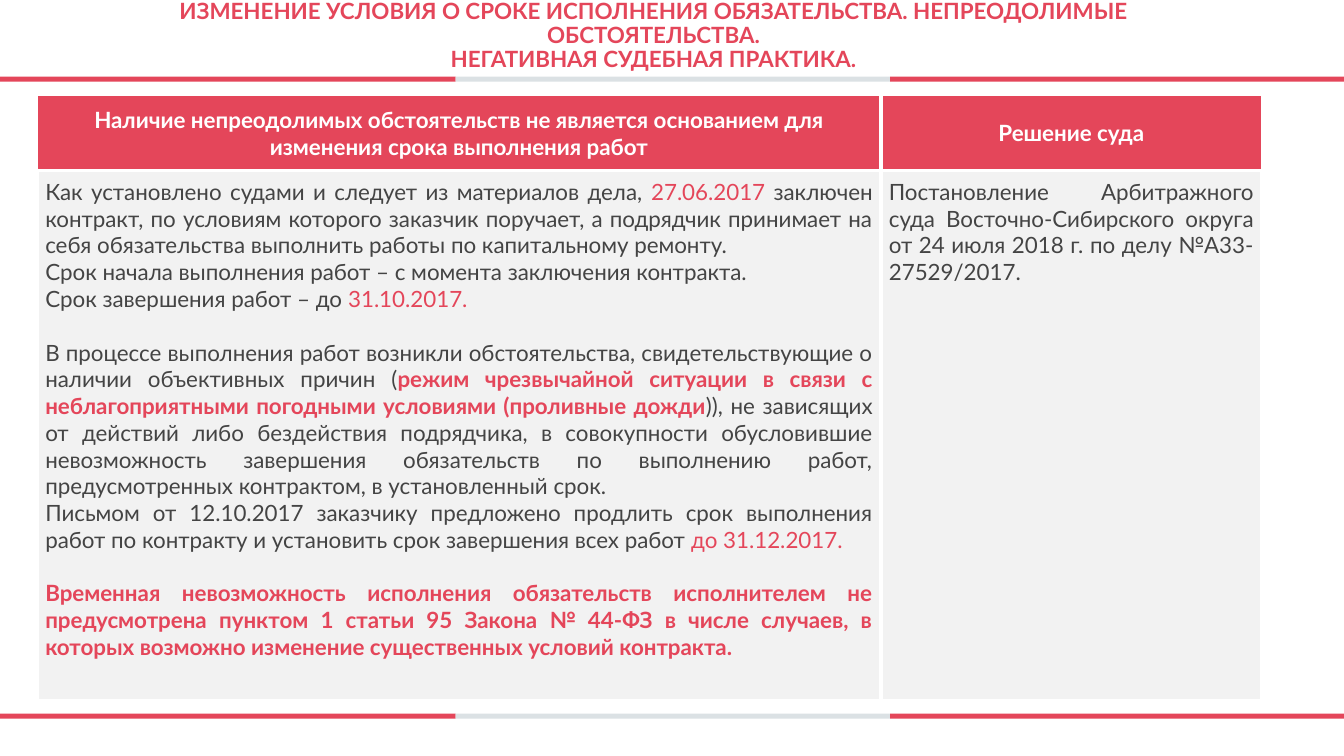
"""Builds a slide on negative court practice about contract deadlines."""
from lxml import etree
from pptx import Presentation
from pptx.dml.color import RGBColor
from pptx.enum.shapes import MSO_SHAPE
from pptx.enum.text import MSO_ANCHOR, PP_ALIGN
from pptx.oxml.ns import qn
from pptx.util import Pt

RECT = MSO_SHAPE.RECTANGLE
TOP, MIDDLE = MSO_ANCHOR.TOP, MSO_ANCHOR.MIDDLE
CENTER, JUSTIFY = PP_ALIGN.CENTER, PP_ALIGN.JUSTIFY

THEME = {
    "red": "E4465A", "grey": "DBE1E4", "panel": "F2F2F2",
    "text": "444444", "white": "FFFFFF",
    "font": "Lato", "size": 16, "line": 19.2,
}

TITLE = [
    "ИЗМЕНЕНИЕ УСЛОВИЯ О СРОКЕ ИСПОЛНЕНИЯ ОБЯЗАТЕЛЬСТВА. НЕПРЕОДОЛИМЫЕ ОБСТОЯТЕЛЬСТВА.",
    "НЕГАТИВНАЯ СУДЕБНАЯ ПРАКТИКА.",
]
HEADERS = [
    "Наличие непреодолимых обстоятельств не является основанием для изменения срока выполнения работ",
    "Решение суда",
]
PLAIN, RED, BOLD = ("text", False), ("red", False), ("red", True)
CASE = [
    (False, [
        ("Как установлено судами и следует из материалов дела, ", PLAIN),
        ("27.06.2017", RED),
        (" заключен контракт, по условиям которого заказчик поручает, а подрядчик принимает на себя "
         "обязательства выполнить работы по капитальному ремонту.", PLAIN),
    ]),
    (False, [("Срок начала выполнения работ – с момента заключения контракта.", PLAIN)]),
    (False, [("Срок завершения работ – до ", PLAIN), ("31.10.2017.", RED)]),
    (True, [
        ("В процессе выполнения работ возникли обстоятельства, свидетельствующие о наличии "
         "объективных причин (", PLAIN),
        ("режим чрезвычайной ситуации в связи с неблагоприятными погодными условиями "
         "(проливные дожди", BOLD),
        (")), не зависящих от действий либо бездействия подрядчика, в совокупности обусловившие "
         "невозможность завершения обязательств по выполнению работ, предусмотренных контрактом, "
         "в установленный срок.", PLAIN),
    ]),
    (False, [
        ("Письмом от 12.10.2017 заказчику предложено продлить срок выполнения работ по контракту "
         "и установить срок завершения всех работ ", PLAIN),
        ("до 31.12.2017.", RED),
    ]),
    (True, [
        ("Временная невозможность исполнения обязательств исполнителем не предусмотрена пунктом 1 "
         "статьи 95 Закона № 44-ФЗ в числе случаев, в которых возможно изменение существенных "
         "условий контракта.", BOLD),
    ]),
]
RULING = [(False, [
    ("Постановление Арбитражного суда Восточно-Сибирского округа от 24 июля 2018 г. "
     "по делу №А33-27529/2017.", PLAIN),
])]

SLIDE_W, SLIDE_H = 960, 540
BAND_EDGES = [0, 325.4, 635.8, SLIDE_W]
BAND_COLORS = ["red", "grey", "red"]
BAND_TOPS, BAND_H = [54.7, 509.8], 3.6
TITLE_BOX = (109.4, -1.4, 715, 54.7)
TABLE_LEFT, TABLE_TOP = 26.6, 68.4
COLS, ROWS = [602.6, 272.2], [53.3, 378.7]
INSET = 5.76


def rgb(name):
    return RGBColor.from_string(THEME[name])


def add_text(p, text, color="text", bold=False):
    r = p.add_run()
    r.text = text
    r.font.name, r.font.size = THEME["font"], Pt(THEME["size"])
    r.font.bold, r.font.color.rgb = bold, rgb(color)


def add_band(s, left, top, width, color):
    sp = s.shapes.add_shape(RECT, Pt(left), Pt(top), Pt(width), Pt(BAND_H))
    sp.shadow.inherit = False
    sp.fill.solid()
    sp.fill.fore_color.rgb = rgb(color)
    sp.line.fill.background()


def add_title(s):
    tf = s.shapes.add_textbox(*map(Pt, TITLE_BOX)).text_frame
    tf.word_wrap = True
    tf.vertical_anchor = MIDDLE
    p = tf.paragraphs[0]
    p.alignment, p.line_spacing = CENTER, 0.9
    for i, line in enumerate(TITLE):
        if i:
            p.add_line_break()
        add_text(p, line, color="red", bold=True)


def style_cell(cell, fill, anchor, inset_y, borders):
    cell.fill.solid()
    cell.fill.fore_color.rgb = rgb(fill)
    cell.vertical_anchor = anchor
    cell.margin_left = cell.margin_right = Pt(INSET)
    cell.margin_top = cell.margin_bottom = Pt(inset_y)
    tcPr = cell._tc.get_or_add_tcPr()
    for i, (side, width) in enumerate(zip("LRTB", borders)):
        ln = etree.Element(qn(f"a:ln{side}"), w=str(Pt(width)))
        solid = etree.SubElement(ln, qn("a:solidFill"))
        etree.SubElement(solid, qn("a:srgbClr"), val=THEME["white"])
        tcPr.insert(i, ln)


def fill_cell(cell, paragraphs, align):
    tf = cell.text_frame
    for i, (gap, runs) in enumerate(paragraphs):
        p = tf.add_paragraph() if i else tf.paragraphs[0]
        p.alignment = align
        if gap:
            p.space_before = Pt(THEME["line"])
        for text, (color, bold) in runs:
            add_text(p, text, color=color, bold=bold)


def add_case_table(s):
    frame = s.shapes.add_table(2, 2, Pt(TABLE_LEFT), Pt(TABLE_TOP), Pt(sum(COLS)), Pt(sum(ROWS)))
    table = frame.table
    table.horz_banding = False
    for col, width in zip(table.columns, COLS):
        col.width = Pt(width)
    for row, height in zip(table.rows, ROWS):
        row.height = Pt(height)
    for c, (header, body) in enumerate(zip(HEADERS, [CASE, RULING])):
        head, cell = table.cell(0, c), table.cell(1, c)
        style_cell(head, "red", MIDDLE, 0, (3 if c else 1, 1 if c else 3, 1, 3))
        fill_cell(head, [(False, [(header, ("white", True))])], CENTER)
        style_cell(cell, "panel", TOP, INSET, (3, 3, 3, 3))
        fill_cell(cell, body, JUSTIFY)


def main():
    prs = Presentation()
    prs.slide_width, prs.slide_height = Pt(SLIDE_W), Pt(SLIDE_H)
    s = prs.slides.add_slide(prs.slide_layouts[6])
    for top in BAND_TOPS:
        for left, right, color in zip(BAND_EDGES, BAND_EDGES[1:], BAND_COLORS):
            add_band(s, left, top, right - left, color)
    add_case_table(s)
    add_title(s)
    prs.save("out.pptx")


if __name__ == "__main__":
    main()
